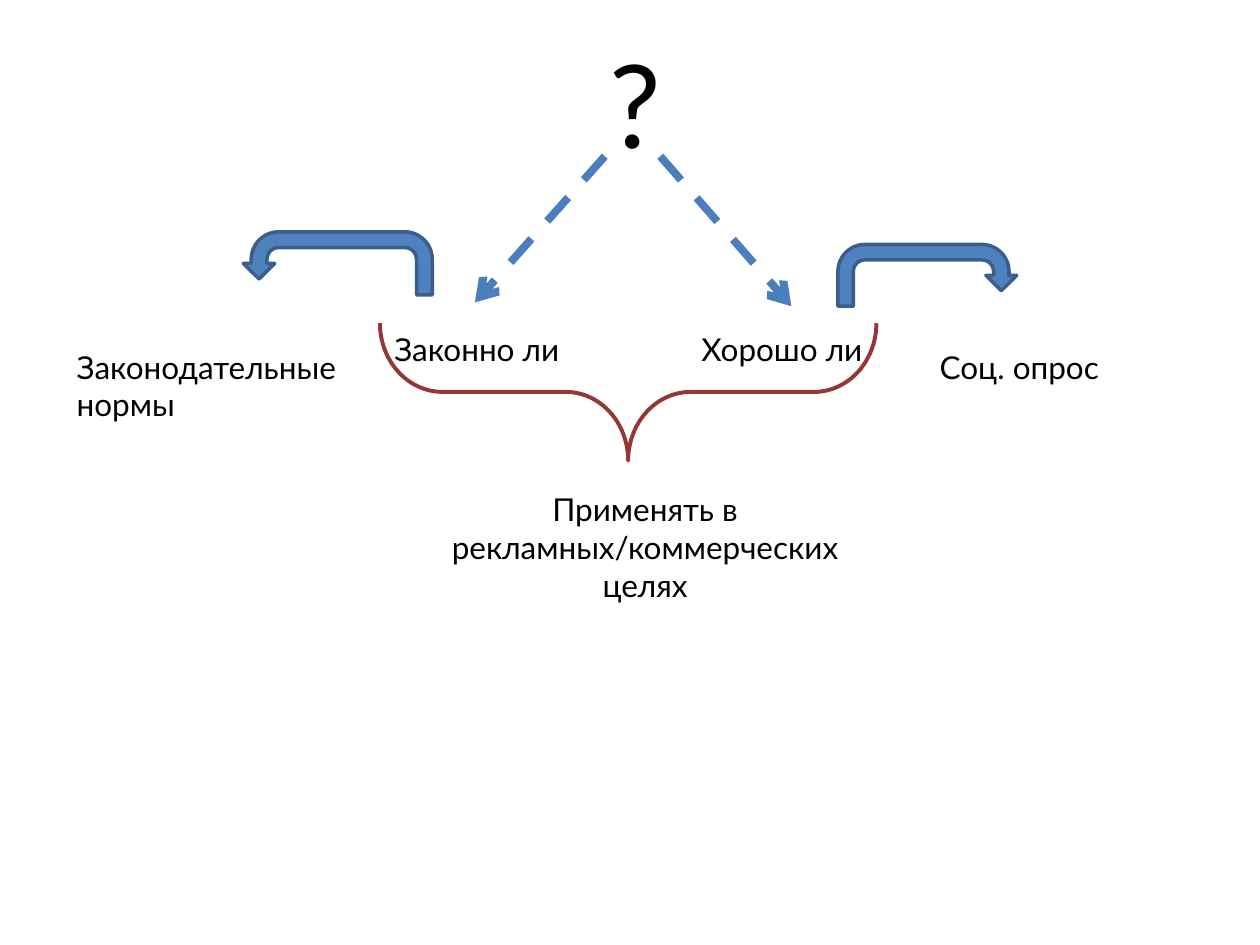
from dataclasses import dataclass

from lxml.etree import SubElement
from pptx import Presentation
from pptx.dml.color import RGBColor
from pptx.enum.dml import MSO_LINE
from pptx.enum.shapes import MSO_CONNECTOR, MSO_SHAPE
from pptx.enum.text import MSO_AUTO_SIZE, PP_ALIGN
from pptx.oxml.ns import qn
from pptx.util import Pt

COLORS = {
    "text": "000000",
    "branch": "4B7EBC",
    "turn_fill": "4F81BD",
    "turn_line": "3A5F8C",
    "brace": "953735",
}
FONT = "Lato"


@dataclass
class Box:
    left: float
    top: float
    width: float
    height: float

    def lengths(self) -> tuple:
        return Pt(self.left), Pt(self.top), Pt(self.width), Pt(self.height)


@dataclass
class Label:
    wording: str
    box: Box
    size: float = 18
    align: PP_ALIGN = PP_ALIGN.LEFT


@dataclass
class Branch:
    start: tuple[float, float]
    end: tuple[float, float]


@dataclass
class Turn:
    box: Box
    to_left: bool = False


QUESTION = Label("?", Box(341.3, 15.1, 45.4, 87.1), 66)
CRITERIA = [
    Label("Законно ли", Box(218.2, 185, 123.1, 29)),
    Label("Хорошо ли", Box(393.8, 185, 108, 29)),
]
CONCLUSION = Label(
    "Применять в рекламных/коммерческих целях",
    Box(238.3, 276.5, 260.6, 72.7),
    align=PP_ALIGN.CENTER,
)
SOURCES = [
    Label("Соц. опрос", Box(529.9, 195.1, 113, 29)),
    Label("Законодательные нормы", Box(36.7, 195.1, 167, 51)),
]
BRANCHES = [
    Branch((345.6, 89.3), (271.4, 172.8)),
    Branch((377.3, 89.3), (452.2, 175)),
]
TURNS = [
    Turn(Box(478.8, 139.7, 102.2, 35.3)),
    Turn(Box(139, 132.5, 108, 36), to_left=True),
]
BRACE = Box(319.7, 82.1, 78.5, 283.7)


def color(role: str) -> RGBColor:
    return RGBColor.from_string(COLORS[role])


def draw_label(shapes, label: Label) -> None:
    frame = shapes.add_textbox(*label.box.lengths()).text_frame
    frame.word_wrap = True
    frame.auto_size = MSO_AUTO_SIZE.SHAPE_TO_FIT_TEXT
    frame.text = label.wording
    paragraph = frame.paragraphs[0]
    paragraph.alignment = label.align
    font = paragraph.runs[0].font
    font.name = FONT
    font.size = Pt(label.size)
    font.color.rgb = color("text")


def draw_branch(shapes, branch: Branch) -> None:
    ends = [Pt(value) for value in branch.start + branch.end]
    arrow = shapes.add_connector(MSO_CONNECTOR.STRAIGHT, *ends)
    arrow.line.color.rgb = color("branch")
    arrow.line.width = Pt(4.5)
    arrow.line.dash_style = MSO_LINE.DASH
    SubElement(arrow.line._get_or_add_ln(), qn("a:tailEnd"), type="arrow")
    SubElement(arrow._element.spPr, qn("a:effectLst"))


def draw_brace(shapes, box: Box) -> None:
    brace = shapes.add_shape(MSO_SHAPE.RIGHT_BRACE, *box.lengths())
    brace.rotation = 90
    brace.adjustments[0] = 0.455
    brace.shadow.inherit = False
    brace.fill.background()
    brace.line.color.rgb = color("brace")
    brace.line.width = Pt(2.25)


def draw_turn(shapes, turn: Turn) -> None:
    arrow = shapes.add_shape(MSO_SHAPE.U_TURN_ARROW, *turn.box.lengths())
    if turn.to_left:
        arrow.rotation = 180
        arrow._element.spPr.xfrm.set("flipV", "1")
    arrow.shadow.inherit = False
    arrow.fill.solid()
    arrow.fill.fore_color.rgb = color("turn_fill")
    arrow.line.color.rgb = color("turn_line")
    arrow.line.width = Pt(2)


def main() -> None:
    """Build the slide that weighs legality and public approval."""
    deck = Presentation()
    deck.slide_width, deck.slide_height = Pt(720), Pt(540)
    shapes = deck.slides.add_slide(deck.slide_layouts[6]).shapes
    draw_label(shapes, QUESTION)
    for branch in BRANCHES:
        draw_branch(shapes, branch)
    for criterion in CRITERIA:
        draw_label(shapes, criterion)
    draw_brace(shapes, BRACE)
    draw_label(shapes, CONCLUSION)
    for turn in TURNS:
        draw_turn(shapes, turn)
    for source in SOURCES:
        draw_label(shapes, source)
    deck.save("out.pptx")


if __name__ == "__main__":
    main()
